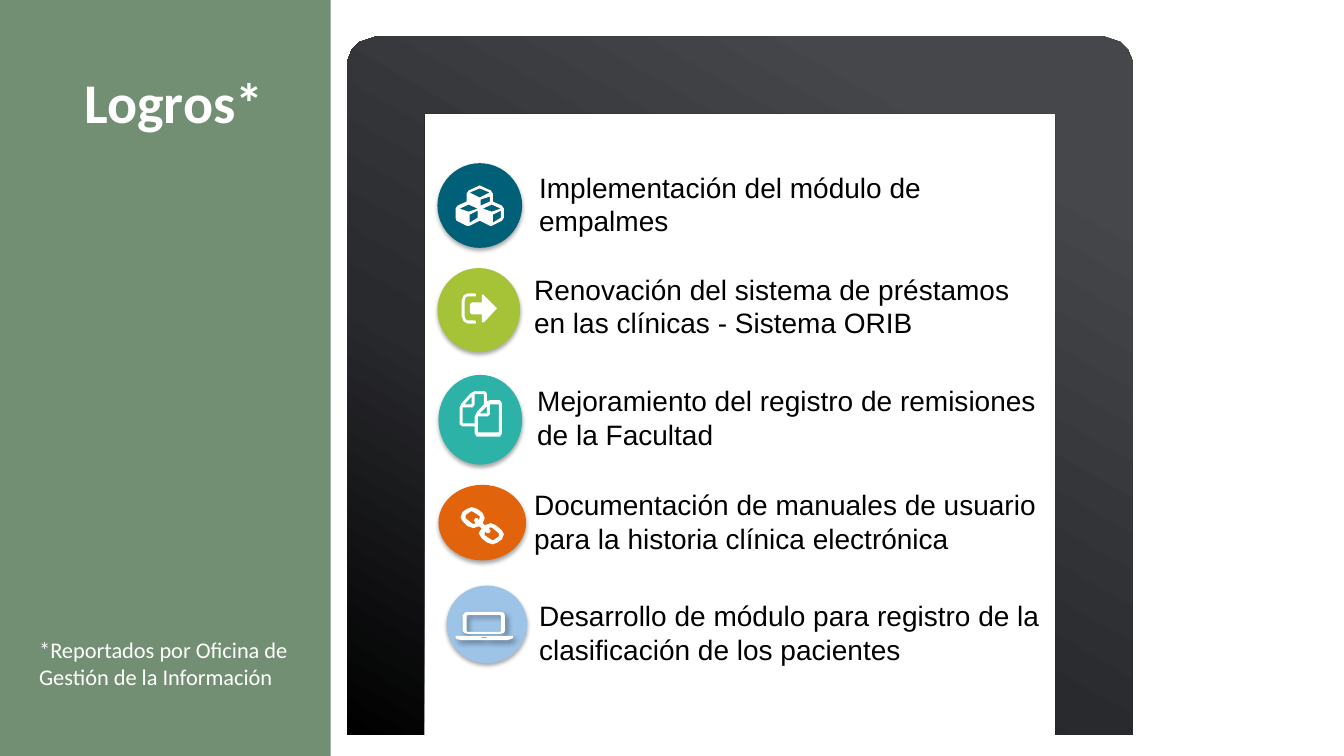
from copy import deepcopy
from dataclasses import dataclass
from math import cos, sin, radians
from lxml.etree import SubElement
from pptx import Presentation
from pptx.dml.color import RGBColor
from pptx.enum.shapes import MSO_SHAPE
from pptx.enum.text import MSO_ANCHOR, MSO_AUTO_SIZE, PP_ALIGN
from pptx.oxml.ns import qn
from pptx.util import Pt


@dataclass(frozen=True)
class Theme:
    white: str = "FFFFFF"
    black: str = "000000"
    side: str = "003300"
    navy: str = "006077"
    lime: str = "A6C338"
    teal: str = "2CB2A6"
    rust: str = "E1630C"
    sky: str = "9DC3E6"
    metal: tuple = ((0, "000000"), (0.38, "292A2E"), (0.85, "46474B"))
    head: int = 40
    item: int = 20
    note: int = 16
    sans: str = "Arial"
    soft: str = "Calibri"


THEME = Theme()
GRID = 0.72
LOOP = [(11, 4), (9, 5), (5, 8), (5, 11), (11, 16), (13, 17), (15, 16), (13, 13),
        (14, 12), (15, 11), (17, 11), (18, 13), (19, 11), (19, 9), (13, 5)]
CUBES = [
    [(24, 0), (35, 5), (37, 8), (37, 16), (46, 20), (48, 23), (48, 32), (46, 35),
     (36, 40), (34, 40), (24, 35), (14, 40), (11, 40), (1, 35), (0, 32), (0, 23),
     (2, 20), (11, 16), (11, 8), (13, 5)],
    [(24, 3), (14, 7), (24, 12), (34, 7)],
    [(34, 11), (25, 14), (25, 20), (34, 16)],
] + [[(x + shift, y) for x, y in face] for shift in (0, 23) for face in (
    [(13, 19), (4, 23), (13, 26), (22, 23)],
    [(22, 25), (14, 29), (14, 37), (22, 32)])]
EXIT = [
    [(21, 1), (22, 2), (34, 14), (35, 15), (34, 16), (22, 29), (20, 29), (20, 21),
     (10, 21), (8, 19), (8, 11), (10, 9), (20, 9), (20, 2)],
    [(6, 0), (13, 0), (14, 1), (14, 3), (6, 3), (4, 4), (3, 7), (3, 23), (4, 26),
     (6, 27), (13, 27), (14, 28), (14, 30), (6, 30), (2, 28), (0, 23), (0, 7), (2, 2)],
]
PAGES = [
    [(15, 0), (25, 0), (27, 2), (27, 10), (30, 9), (40, 9), (42, 12), (42, 42),
     (40, 45), (17, 45), (15, 42), (15, 35), (3, 35), (0, 33), (0, 16), (2, 12), (11, 2)],
    [(15, 3), (15, 13), (13, 16), (3, 16), (3, 32), (15, 32), (15, 25), (17, 21),
     (24, 13), (24, 3)],
    [(30, 13), (30, 23), (28, 25), (18, 25), (18, 41), (39, 41), (39, 13)],
    [(27, 15), (20, 22), (27, 22)],
    [(12, 5), (5, 13), (12, 13)],
]
CHAIN = [
    [(11, 0), (17, 2), (22, 6), (24, 11), (22, 16), (24, 18), (30, 16), (35, 18),
     (41, 23), (43, 27), (41, 32), (37, 35), (32, 37), (26, 35), (21, 31), (18, 26),
     (21, 21), (18, 19), (13, 21), (7, 19), (2, 14), (0, 10), (2, 5), (6, 2)],
    LOOP,
    [(43 - x, 37 - y) for x, y in LOOP],
]
LAPTOP = [
    [(0, 24), (57, 24), (57, 26), (55, 27), (52, 28), (5, 28), (1, 27), (0, 26)],
    [(26, 25), (31, 25), (31, 26), (26, 26)],
    [(12, 0), (44, 0), (48, 1), (49, 4), (49, 19), (48, 21), (44, 22), (12, 22),
     (9, 21), (7, 19), (7, 4), (9, 1)],
    [(12, 3), (11, 4), (11, 19), (12, 20), (44, 20), (45, 19), (45, 4), (44, 3)],
]
ROWS = [
    ("Implementación del módulo de empalmes", THEME.navy,
     (64.5, 90.6, 60.5, 60.5), CUBES, (12.9, 15.9), (130, 92.1, 380.2)),
    ("Renovación del sistema de préstamos en las clínicas - Sistema ORIB", THEME.lime,
     (64.5, 165.5, 59, 59.8), EXIT, (17.3, 18), (126.4, 164.8, 378.7)),
    ("Mejoramiento del registro de remisiones de la Facultad", THEME.teal,
     (65.2, 241.8, 59.8, 64.1), PAGES, (15.1, 11.6), (128.6, 244.7, 383)),
    ("Documentación de manuales de usuario para la historia clínica electrónica",
     THEME.rust, (65.2, 320.3, 62.6, 54), CHAIN, (15.8, 15.9), (126.4, 318.9, 388.1)),
    ("Desarrollo de módulo para registro de la clasificación de los pacientes",
     THEME.sky, (71, 392.3, 57.6, 55.4), LAPTOP, (6.4, 18.7), (130, 398.1, 385.2)),
]


def tint(color, alpha):
    node = SubElement(color, qn("a:alpha"))
    node.set("val", str(alpha * 1000))


def shade(shape, alpha, blur, dist, angle):
    effect = shape._element.spPr.find(qn("a:effectLst"))
    outer = SubElement(effect, qn("a:outerShdw"), blurRad=str(Pt(blur)),
                       dist=str(Pt(dist)), dir=str(angle * 60000), rotWithShape="0")
    tint(SubElement(outer, qn("a:srgbClr"), val=THEME.black), alpha)


def paint(shape, color=None):
    shape.shadow.inherit = False
    shape.line.fill.background()
    if color:
        shape.fill.solid()
        shape.fill.fore_color.rgb = RGBColor.from_string(color)
    return shape


def trace(slide, rings, left, top, scale=1):
    first, *rest = rings
    pen = slide.shapes.build_freeform(*first[0], scale=Pt(100 * scale) / 100)
    pen.add_line_segments(first[1:], close=True)
    for ring in rest:
        pen.move_to(*ring[0])
        pen.add_line_segments(ring[1:], close=True)
    return pen.convert_to_shape(Pt(left), Pt(top))


def write(shape, text, size, font, color, bold=False, align=PP_ALIGN.LEFT,
          anchor=MSO_ANCHOR.TOP, spacing=None):
    frame = shape.text_frame
    frame.word_wrap = True
    frame.auto_size = MSO_AUTO_SIZE.NONE
    frame.vertical_anchor = anchor
    para = frame.paragraphs[0]
    para.text = text
    para.alignment = align
    para.line_spacing = spacing
    para.font.size = Pt(size)
    para.font.name = font
    para.font.bold = bold
    para.font.color.rgb = RGBColor.from_string(color)


def add_side(slide, left, top, width, height):
    panel = paint(slide.shapes.add_shape(
        MSO_SHAPE.RECTANGLE, Pt(left), Pt(top), Pt(width), Pt(height)), THEME.side)
    tint(panel._element.spPr.find(qn("a:solidFill"))[0], 55)
    title = slide.shapes.title
    slide.shapes._spTree.append(title._element)
    title.left, title.top = Pt(left + 40.3), Pt(top + 50.4)
    title.width, title.height = Pt(168), Pt(50.4)
    write(title, "Logros*", THEME.head, THEME.soft, THEME.white, bold=True,
          align=PP_ALIGN.CENTER, anchor=MSO_ANCHOR.MIDDLE, spacing=0.9)
    note = slide.shapes.add_textbox(Pt(left + 20.9), Pt(top + 450.7), Pt(193), Pt(46))
    write(note, "*Reportados por Oficina de Gestión de la Información",
          THEME.note, THEME.soft, THEME.white)


def add_frame(slide, left, top, width, height):
    bezel, wide, tall = 55.4, 23.8, 20.9
    turns = [radians(step * 7.5) for step in range(13)]
    curve = [(wide * (1 - cos(t)), tall * (1 - sin(t))) for t in turns]
    edge = curve + [(width - x, y) for x, y in reversed(curve)]
    edge += [(width, height), (width - bezel, height), (width - bezel, bezel),
             (bezel, bezel), (bezel, height), (0, height)]
    frame = paint(trace(slide, [edge], left, top))
    frame.fill.gradient()
    frame.fill.gradient_angle = 60
    stops = frame._element.spPr.find(".//" + qn("a:gsLst"))
    stops.append(deepcopy(stops[-1]))
    for stop, (place, color) in zip(frame.fill.gradient_stops, THEME.metal):
        stop.position = place
        stop.color.rgb = RGBColor.from_string(color)


def add_row(slide, left, top, text, color, badge, icon, inset, label):
    x, y, width, height = badge
    disc = paint(slide.shapes.add_shape(
        MSO_SHAPE.OVAL, Pt(left + x), Pt(top + y), Pt(width), Pt(height)), color)
    shade(disc, 35, 3.1, 1.8, 90)
    glyph = paint(trace(slide, icon, left + x + inset[0], top + y + inset[1], GRID),
                  THEME.white)
    if icon is LAPTOP:
        shade(glyph, 40, 4, 3, 45)
    x, y, width = label
    box = slide.shapes.add_textbox(Pt(left + x), Pt(top + y), Pt(width), Pt(55.4))
    write(box, text, THEME.item, THEME.sans, THEME.black)


def add_tablet(slide, left, top, width, height):
    add_frame(slide, left, top, width, height)
    for row in ROWS:
        add_row(slide, left, top, *row)


def main():
    deck = Presentation()
    deck.slide_width, deck.slide_height = Pt(960), Pt(540)
    slide = deck.slides.add_slide(deck.slide_layouts[5])
    slide.background.fill.solid()
    slide.background.fill.fore_color.rgb = RGBColor.from_string(THEME.white)
    add_side(slide, 0, 0, 236.2, 540)
    add_tablet(slide, 248, 26, 561, 499)
    deck.save("out.pptx")


if __name__ == "__main__":
    main()
